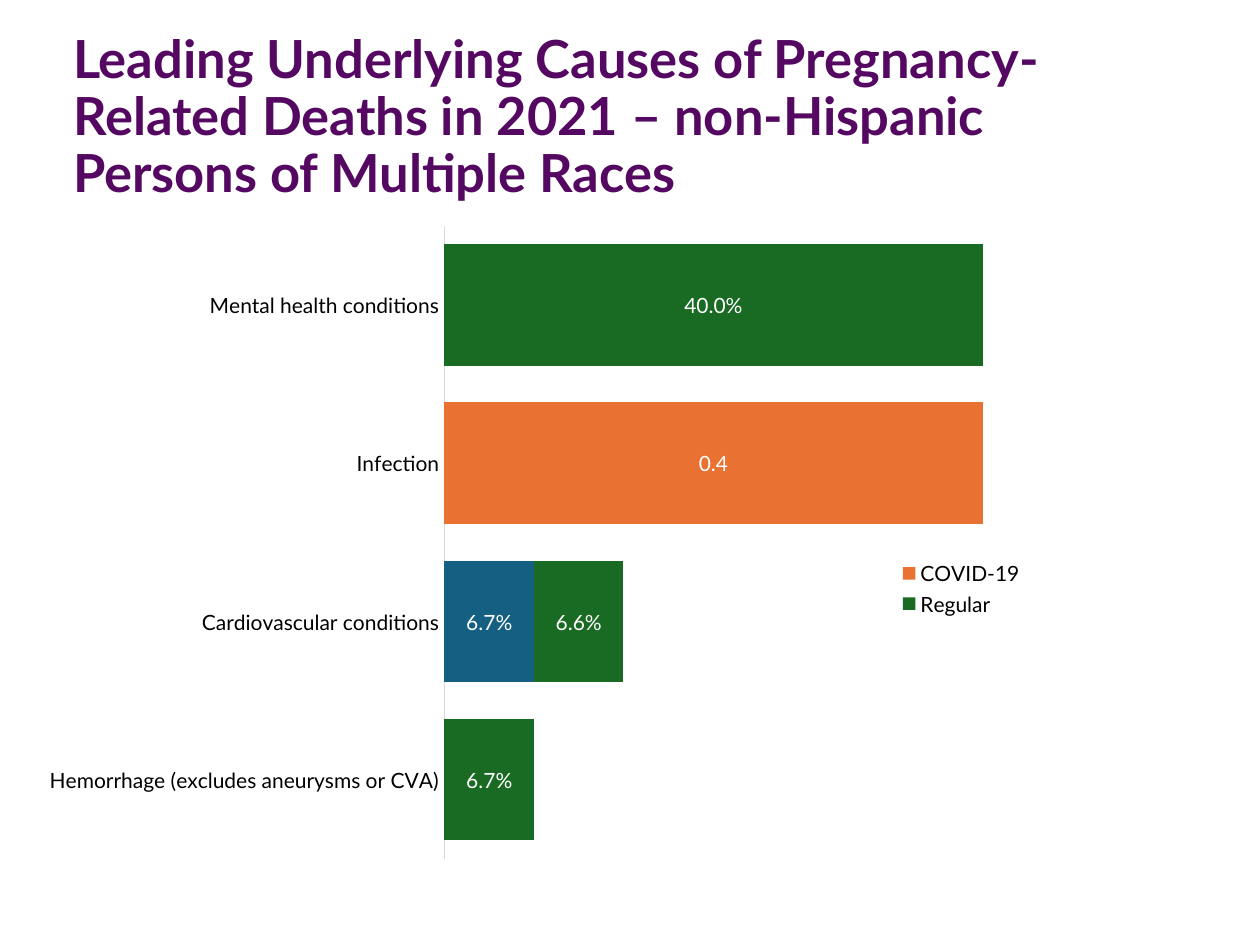
from pptx import Presentation
from pptx.chart.data import CategoryChartData
from pptx.dml.color import RGBColor
from pptx.enum.chart import (XL_CHART_TYPE, XL_LABEL_POSITION,
                             XL_LEGEND_POSITION, XL_TICK_MARK)
from pptx.enum.text import MSO_ANCHOR
from pptx.oxml import parse_xml
from pptx.oxml.ns import nsdecls, qn
from pptx.util import Inches, Pt

CAUSES = ["Hemorrhage (excludes aneurysms or CVA)", "Cardiovascular conditions",
          "Infection", "Mental health conditions"]
# name, values, fill, label format
SERIES = [
    ("", [None, 0.067, None, None], "156082", "0.0%"),
    ("COVID-19", [None, None, 0.4, None], "E97132", "General"),
    ("Regular", [0.067, 0.066, 0, 0.4], "196B24", "0.0%"),
]


def color(code):
    return RGBColor.from_string(code)


def style(font, size, code, bold=False):
    for key, value in {"name": "Lato", "size": Pt(size), "bold": bold}.items():
        setattr(font, key, value)
    font.color.rgb = color(code)


def element(xml):
    tag, rest = xml.split(" ", 1)
    return parse_xml(f"{tag} {nsdecls('c')} {rest}")


def place(x, y, w, h, inner=False):
    target = '<c:layoutTarget val="inner"/>' if inner else ""
    sizes = "".join(f'<c:{tag} val="{value}"/>'
                    for tag, value in zip("xywh", (x, y, w, h)))
    modes = '<c:xMode val="edge"/><c:yMode val="edge"/>'
    return element(f"<c:layout ><c:manualLayout>{target}{modes}{sizes}"
                   "</c:manualLayout></c:layout>")


def clear(node):
    for old in node.findall(qn("c:layout")):
        node.remove(old)


def add_title(slide, box):
    frame = slide.shapes.add_textbox(*map(Inches, box)).text_frame
    for key, value in {"word_wrap": True, "vertical_anchor": MSO_ANCHOR.MIDDLE,
                       "margin_left": 0, "margin_right": Inches(0.1),
                       "margin_top": Inches(0.1),
                       "margin_bottom": Inches(0.1)}.items():
        setattr(frame, key, value)
    para = frame.paragraphs[0]
    para.line_spacing = 0.9
    run = para.add_run()
    run.text = ("Leading Underlying Causes of Pregnancy-Related Deaths in 2021 "
                "– non-Hispanic Persons of Multiple Races")
    style(run.font, 30, "550861", True)


def add_bars(slide, box):
    data = CategoryChartData()
    data.categories = CAUSES
    for name, values, *_ in SERIES:
        data.add_series(name, values)
    chart = slide.shapes.add_chart(XL_CHART_TYPE.BAR_STACKED,
                                   *map(Inches, box), data).chart
    chart.has_title = False
    style(chart.font, 10, "4EA72E")

    # Axes
    causes, share = chart.category_axis, chart.value_axis
    causes.major_tick_mark = causes.minor_tick_mark = XL_TICK_MARK.NONE
    style(causes.tick_labels.font, 12, "000000")
    causes.format.line.color.rgb = color("D9D9D9")
    causes.format.line.width = Pt(0.75)
    for key, value in {"visible": False, "has_major_gridlines": False,
                       "minimum_scale": 0, "maximum_scale": 0.45}.items():
        setattr(share, key, value)

    # Bars and their labels
    plot = chart.plots[0]
    plot.gap_width, plot.overlap, plot.vary_by_categories = 30, 100, False
    for series, (_, _, fill, form) in zip(plot.series, SERIES):
        series.format.fill.solid()
        series.format.fill.fore_color.rgb = color(fill)
        labels = series.data_labels
        for key, value in {"show_value": True, "number_format": form,
                           "number_format_is_linked": False,
                           "position": XL_LABEL_POSITION.CENTER}.items():
            setattr(labels, key, value)
        style(labels.font, 12, "FFFFFF")

    # No label on the zero bar
    zero = element('<c:dLbl ><c:idx val="2"/><c:delete val="1"/></c:dLbl>')
    plot.series[2].data_labels._element.insert(0, zero)

    # Legend of the two named series
    chart.has_legend = True
    legend = chart.legend
    legend.position = XL_LEGEND_POSITION.RIGHT
    legend.include_in_layout = True
    style(legend.font, 12, "000000")
    node = legend._element
    clear(node)
    hide = element('<c:legendEntry ><c:idx val="2"/><c:delete val="1"/>'
                   "</c:legendEntry>")
    node.find(qn("c:legendPos")).addnext(hide)
    hide.addnext(place(0.83, 0.52, 0.13, 0.1))

    # Plot area
    area = chart._chartSpace.chart.plotArea
    clear(area)
    area.insert(0, place(0.4, 0.02, 0.58, 0.96, inner=True))


def main():
    deck = Presentation()
    deck.slide_width, deck.slide_height = Inches(10), Inches(7.5)
    slide = deck.slides.add_slide(deck.slide_layouts[6])
    add_bars(slide, (0.21, 1.69, 8.29, 5.23))
    add_title(slide, (0.58, 0.35, 7.92, 1.18))
    deck.save("out.pptx")


if __name__ == "__main__":
    main()
